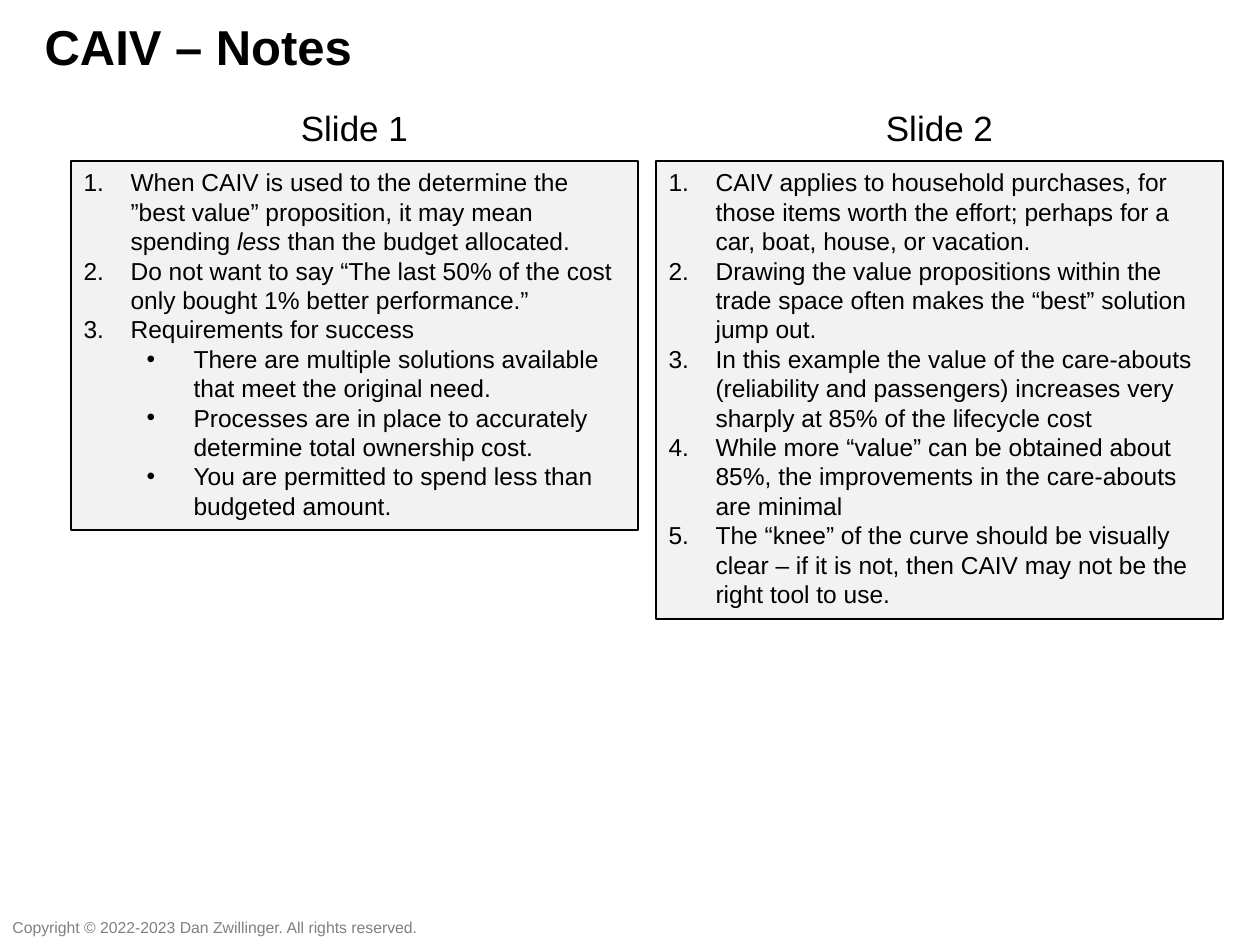
from lxml import etree
from pptx import Presentation
from pptx.dml.color import RGBColor
from pptx.enum.text import MSO_ANCHOR, MSO_AUTO_SIZE, PP_ALIGN
from pptx.oxml.ns import qn
from pptx.util import Pt

PX = 914400 / 126
FONT = "Arial"
BLACK = RGBColor(0, 0, 0)
GRAY = RGBColor(0x80, 0x80, 0x80)
PANEL_FILL = RGBColor(0xF2, 0xF2, 0xF2)
LEFT, CENTER = PP_ALIGN.LEFT, PP_ALIGN.CENTER
TOP, MIDDLE = MSO_ANCHOR.TOP, MSO_ANCHOR.MIDDLE
COMPARISON_LAYOUT = 4
HANGING = 47
LEVEL_STEP = 63

# Each note is (level, runs); each run is (text, italic)
SLIDE_1_NOTES = [
    (0, [("When CAIV is used to the determine the ”best value” proposition, "
          "it may mean spending ", False),
         ("less", True),
         (" than the budget allocated.", False)]),
    (0, [("Do not want to say “The last 50% of the cost only bought 1% "
          "better performance.”", False)]),
    (0, [("Requirements for success", False)]),
    (1, [("There are multiple solutions available that meet the original need.", False)]),
    (1, [("Processes are in place to accurately determine total ownership cost.", False)]),
    (1, [("You are permitted to spend less than budgeted amount.", False)]),
]
SLIDE_2_NOTES = [(0, [(text, False)]) for text in (
    "CAIV applies to household purchases, for those items worth the effort; "
    "perhaps for a car, boat, house, or vacation.",
    "Drawing the value propositions within the trade space often makes the "
    "“best” solution jump out.",
    "In this example the value of the care-abouts (reliability and passengers) "
    "increases very sharply at 85% of the lifecycle cost",
    "While more “value” can be obtained about 85%, the improvements in the "
    "care-abouts are minimal",
    "The “knee” of the curve should be visually clear – if it is not, then CAIV "
    "may not be the right tool to use.",
)]


def px(length):
    return round(length * PX)


def place(shape, box, anchor=TOP, wrap=True):
    shape.left, shape.top, shape.width, shape.height = map(px, box)
    frame = shape.text_frame
    frame.auto_size = MSO_AUTO_SIZE.NONE
    frame.word_wrap = wrap
    frame.vertical_anchor = anchor
    return frame


def add_span(para, text, size, color=BLACK, bold=False, italic=False):
    span = para.add_run()
    span.text = text
    font = span.font
    font.name, font.size, font.bold, font.italic = FONT, Pt(size), bold, italic
    font.color.rgb = color


def write_line(shape, box, text, size, align=LEFT, anchor=TOP, wrap=True, **style):
    para = place(shape, box, anchor, wrap).paragraphs[0]
    para.alignment = align
    para.space_before = Pt(0)
    add_span(para, text, size, **style)


def set_bullet(para, level):
    """Number the top level and dot the level below, with a hanging indent."""
    props = para._p.get_or_add_pPr()
    props.set("marL", str(px(HANGING + level * LEVEL_STEP)))
    props.set("indent", str(px(-HANGING)))
    etree.SubElement(props, qn("a:buFont"), typeface=FONT)
    if level:
        etree.SubElement(props, qn("a:buChar"), char="•")
    else:
        etree.SubElement(props, qn("a:buAutoNum"), type="arabicPeriod")


def fill_notes_column(heading, panel, box, title, notes):
    left, top, width, height = box
    heading_height, panel_offset = 55, 61

    # Heading above the panel
    write_line(heading, (left, top, width, heading_height), title, 20, CENTER)

    # Outlined panel with the list
    frame = place(panel, (left, top + panel_offset, width, height - panel_offset))
    panel.fill.solid()
    panel.fill.fore_color.rgb = PANEL_FILL
    panel.line.color.rgb = BLACK
    panel.line.width = Pt(0.75)
    for index, (level, runs) in enumerate(notes):
        para = frame.add_paragraph() if index else frame.paragraphs[0]
        para.level = level
        para.alignment = LEFT
        para.space_before = Pt(0)
        set_bullet(para, level)
        for text, italic in runs:
            add_span(para, text, 14, italic=italic)


def add_footer(page, box):
    footer = page.shapes.add_textbox(*map(px, box))
    write_line(footer, box, "Copyright © 2022-2023 Dan Zwillinger. All rights reserved.",
               9, wrap=False, color=GRAY)


def build_notes_page(deck):
    page = deck.slides.add_slide(deck.slide_layouts[COMPARISON_LAYOUT])
    title, *parts = page.placeholders
    write_line(title, (32, 10, 993, 72), "CAIV – Notes", 28, anchor=MIDDLE, bold=True)

    # Two columns of equal width
    fill_notes_column(*parts[:2], (71, 100, 567, 430), "Slide 1", SLIDE_1_NOTES)
    fill_notes_column(*parts[2:], (656, 100, 567, 519), "Slide 2", SLIDE_2_NOTES)

    add_footer(page, (0, 912, 436, 32))


def main():
    deck = Presentation()
    deck.slide_width, deck.slide_height = px(1260), px(945)
    build_notes_page(deck)
    deck.save("out.pptx")


if __name__ == "__main__":
    main()
